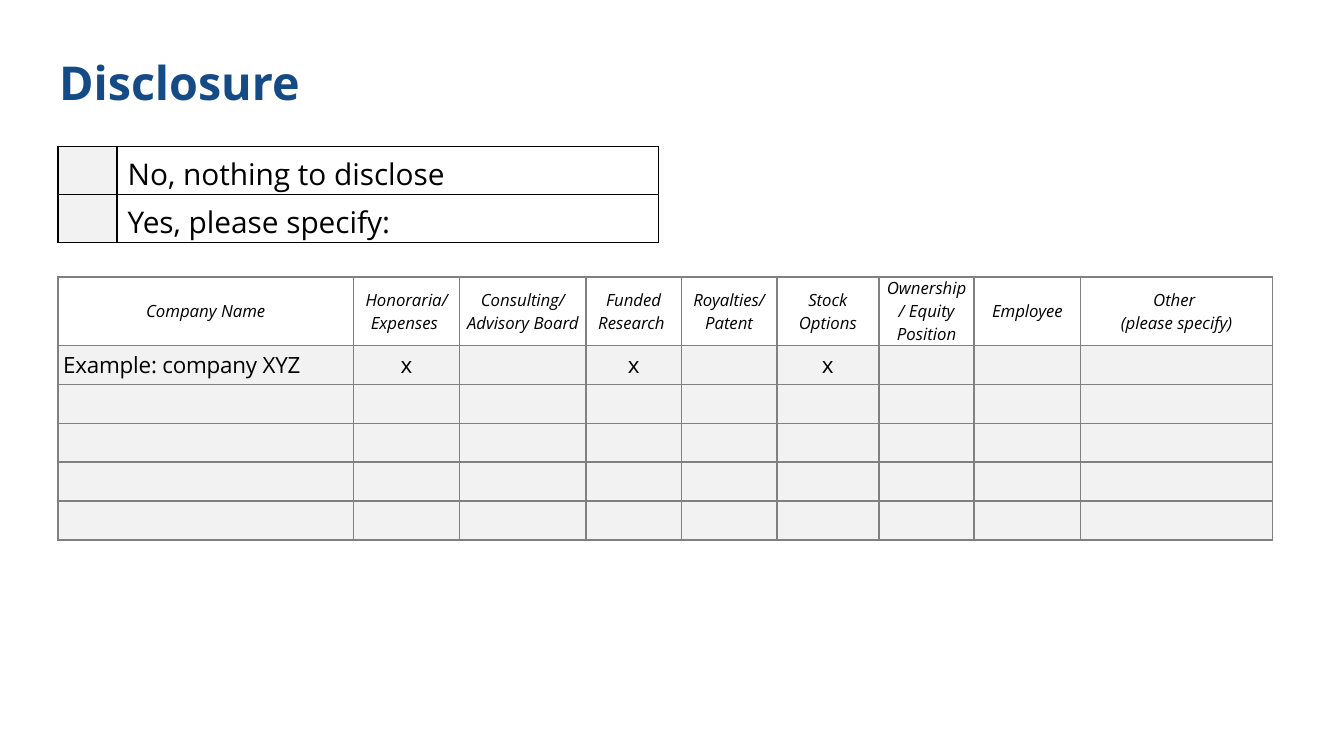
"""Build a disclosure slide with a yes/no table and a table of company interests."""
from dataclasses import dataclass

from lxml.etree import SubElement
from pptx import Presentation
from pptx.dml.color import RGBColor
from pptx.enum.text import MSO_ANCHOR as Anchor, PP_ALIGN as Align
from pptx.oxml.ns import qn
from pptx.util import Inches, Pt


@dataclass(frozen=True)
class Theme:
    font: str = "Open Sans"
    title: str = "144A85"
    text: str = "000000"
    grid: str = "808080"
    field: str = "F2F2F2"
    title_size: int = 25
    answer_size: int = 16
    entry_size: int = 12
    heading_size: int = 9


theme = Theme()


def format_text(frame, size, color, align, bold=False, italic=False):
    for paragraph in frame.paragraphs:
        paragraph.alignment = align
        for run in paragraph.runs:
            font = run.font
            font.name, font.size = theme.font, Pt(size)
            font.bold, font.italic = bold, italic
            font.color.rgb = RGBColor.from_string(color)
        if not paragraph.runs:
            SubElement(paragraph._p, qn("a:endParaRPr"), sz=str(size * 100))


def add_grid(left, top, widths, heights, border):
    frame = slide.shapes.add_table(
        len(heights), len(widths), Inches(left), Inches(top),
        Inches(sum(widths)), Inches(sum(heights)))
    grid = frame.table
    grid.first_row = grid.horz_banding = False
    for column, width in zip(grid.columns, widths):
        column.width = Inches(width)
    for row, height in zip(grid.rows, heights):
        row.height = Inches(height)
    for cell in grid.iter_cells():
        properties = cell._tc.get_or_add_tcPr()
        for side in ("lnL", "lnR", "lnT", "lnB"):
            line = SubElement(properties, qn(f"a:{side}"), w=str(Pt(1)))
            SubElement(SubElement(line, qn("a:solidFill")), qn("a:srgbClr"), val=border)
        cell.fill.background()
        cell.margin_top = cell.margin_bottom = 0
    return grid


presentation = Presentation()
presentation.slide_width = Inches(10)
presentation.slide_height = Inches(10) * 9 // 16
slide = presentation.slides.add_slide(presentation.slide_layouts[5])

title = slide.shapes.title
title.left, title.top = Inches(0.34), Inches(0.29)
title.width, title.height = Inches(5.67), Inches(0.63)
heading = title.text_frame
heading.margin_left = heading.margin_right = Inches(0.1)
heading.margin_top = heading.margin_bottom = Inches(0.1)
heading.vertical_anchor = Anchor.MIDDLE
heading.text = "Disclosure"
format_text(heading, theme.title_size, theme.title, Align.LEFT, bold=True)

answers = ["No, nothing to disclose", "Yes, please specify:"]
choices = add_grid(0.43, 1.09, [0.44, 4.03], [0.32] * len(answers), theme.text)
for row, answer in enumerate(answers):
    checkbox, label = choices.cell(row, 0), choices.cell(row, 1)
    checkbox.fill.solid()
    checkbox.fill.fore_color.rgb = RGBColor.from_string(theme.field)
    label.text_frame.text = answer
    label.margin_left = label.margin_right = Inches(0.08)
    label.margin_top = Inches(0.01)
    label.text_frame.paragraphs[0].line_spacing = 1.15
    for cell in (checkbox, label):
        format_text(cell.text_frame, theme.answer_size, theme.text, Align.LEFT)

interests = {
    "Company Name": 2.2,
    "Honoraria/\nExpenses ": 0.79,
    "Consulting/ Advisory Board": 0.94,
    "Funded Research ": 0.71,
    "Royalties/ Patent": 0.71,
    "Stock Options": 0.76,
    "Ownership/ Equity Position": 0.71,
    "Employee": 0.79,
    "Other \n(please specify)": 1.43,
}
example = ["Example: company XYZ ", "x", "", "x", "", "x", "", "", ""]
blank_entries = [[""] * len(interests)] * 4
entries = [list(interests), example, *blank_entries]
heights = [0.45] + [0.29] * (len(entries) - 1)
companies = add_grid(0.43, 2.06, list(interests.values()), heights, theme.grid)
for row, entry in enumerate(entries):
    is_header = row == 0
    for column, value in enumerate(entry):
        cell = companies.cell(row, column)
        cell.text_frame.text = value
        cell.vertical_anchor = Anchor.MIDDLE
        cell.margin_left = cell.margin_right = Inches(0.04)
        size = theme.heading_size if is_header else theme.entry_size
        align = Align.CENTER if is_header or column else Align.LEFT
        format_text(cell.text_frame, size, theme.text, align, italic=is_header)
        if not is_header:
            cell.fill.solid()
            cell.fill.fore_color.rgb = RGBColor.from_string(theme.field)

example_name = companies.cell(1, 0).text_frame.paragraphs[0].runs[0]
example_name.font._element.set("spc", "-10")

presentation.save("out.pptx")
